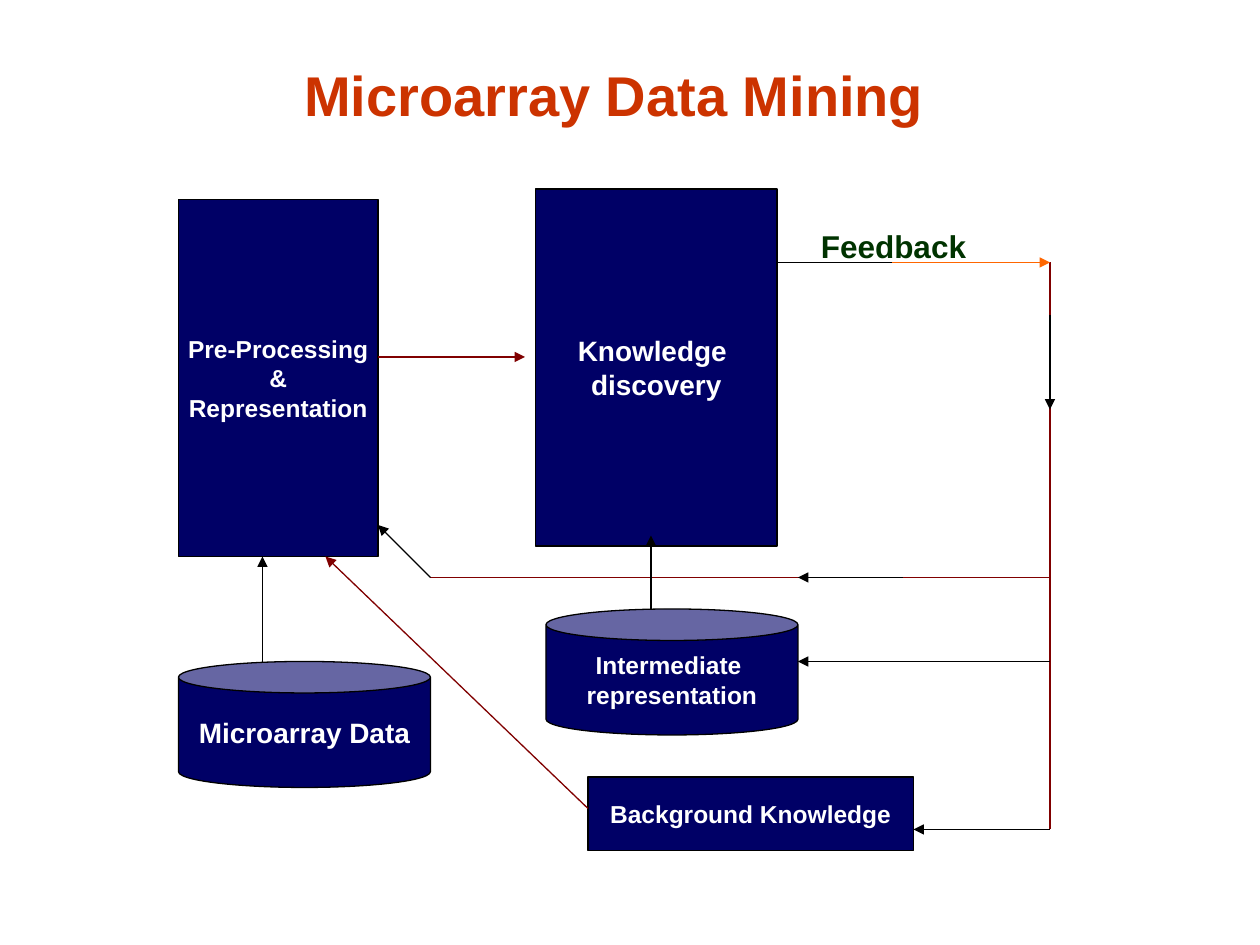
import pptx
import pptx.util
import pptx.dml.color
import pptx.enum.shapes
import pptx.enum.text
import lxml.etree

Pt = pptx.util.Pt
SHAPE = pptx.enum.shapes.MSO_SHAPE
ALIGN = pptx.enum.text.PP_ALIGN
ANCHOR = pptx.enum.text.MSO_ANCHOR

THEME = {
    "font": "Arial", "line": 0.75,
    "title": "CC3300", "label": "003300", "box": "000066", "text": "FFFFFF",
    "black": "000000", "maroon": "800000", "orange": "FF6600",
    "title_size": 32, "label_size": 18, "large": 16, "small": 14,
}

# The slide is a grid of 120 columns by 90 rows of square cells.
COLS, ROWS = 120, 90
CELL = pptx.util.Inches(10) // COLS


def rgb(name):
    return pptx.dml.color.RGBColor.from_string(THEME[name])


def write(tf, lines, size, color, align):
    """Put one bold paragraph per line into a text frame."""
    tf.text = "\n".join(lines)
    for p in tf.paragraphs:
        p.alignment = align
        p.font.name = THEME["font"]
        p.font.size = Pt(THEME[size])
        p.font.bold = True
        p.font.color.rgb = rgb(color)


prs = pptx.Presentation()
prs.slide_width, prs.slide_height = CELL * COLS, CELL * ROWS
s = prs.slides.add_slide(prs.slide_layouts[5])

title = s.shapes.title
title.left, title.top, title.width, title.height = [CELL * n for n in (9, 6, 99, 6)]
title.text_frame.vertical_anchor = ANCHOR.MIDDLE
write(title.text_frame, ["Microarray Data Mining"], "title_size", "title", ALIGN.CENTER)

# Stages and stores: preset, column, row, columns wide, rows high, type size, lines
boxes = [
    (SHAPE.CAN, 52, 58, 24, 12, "small", ["Intermediate ", "representation"]),
    (SHAPE.CAN, 17, 63, 24, 12, "large", ["Microarray Data"]),
    (SHAPE.RECTANGLE, 56, 74, 31, 7, "small", ["Background Knowledge"]),
    (SHAPE.RECTANGLE, 17, 19, 19, 34, "small", ["Pre-Processing", "&", "Representation"]),
    (SHAPE.RECTANGLE, 51, 18, 23, 34, "large", ["Knowledge ", "discovery"]),
]
for preset, col, row, wide, high, size, lines in boxes:
    sp = s.shapes.add_shape(preset, *[CELL * n for n in (col, row, wide, high)])
    sp.shadow.inherit = False
    sp.fill.solid()
    sp.fill.fore_color.rgb = rgb("box")
    sp.line.color.rgb = rgb("black")
    sp.line.width = Pt(THEME["line"])
    sp.text_frame.word_wrap = False
    sp.text_frame.vertical_anchor = ANCHOR.MIDDLE
    write(sp.text_frame, lines, size, "text", ALIGN.CENTER)

label = s.shapes.add_textbox(*[CELL * n for n in (77, 21, 22, 5)])
label.text_frame.word_wrap = True
write(label.text_frame, ["Feedback"], "label_size", "label", ALIGN.LEFT)

# Flow lines: start column and row, end column and row, colour, arrowhead
flows = [
    (61, 25, 87, 25, "black", False),
    (36, 34, 50, 34, "maroon", True),
    (25, 63, 25, 53, "black", True),
    (56, 77, 31, 53, "maroon", True),
    (100, 25, 100, 79, "maroon", False),
    (100, 79, 87, 79, "black", True),
    (100, 63, 76, 63, "black", True),
    (100, 55, 41, 55, "maroon", False),
    (41, 55, 36, 50, "black", True),
    (100, 30, 100, 39, "black", True),
    (85, 25, 100, 25, "orange", True),
    (86, 55, 76, 55, "black", True),
    (62, 58, 62, 51, "black", True),
]
# The feedback line leaves the right side of the knowledge box.
flows[0] = (74,) + flows[0][1:]
for x1, y1, x2, y2, color, arrow in flows:
    line = s.shapes.add_connector(pptx.enum.shapes.MSO_CONNECTOR.STRAIGHT,
                                  *[CELL * n for n in (x1, y1, x2, y2)])
    line.line.color.rgb = rgb(color)
    line.line.width = Pt(THEME["line"])
    if arrow:
        lxml.etree.SubElement(line.line._get_or_add_ln(),
                              pptx.oxml.ns.qn("a:tailEnd"), type="triangle")
    lxml.etree.SubElement(line._element.spPr, pptx.oxml.ns.qn("a:effectLst"))

prs.save("out.pptx")
